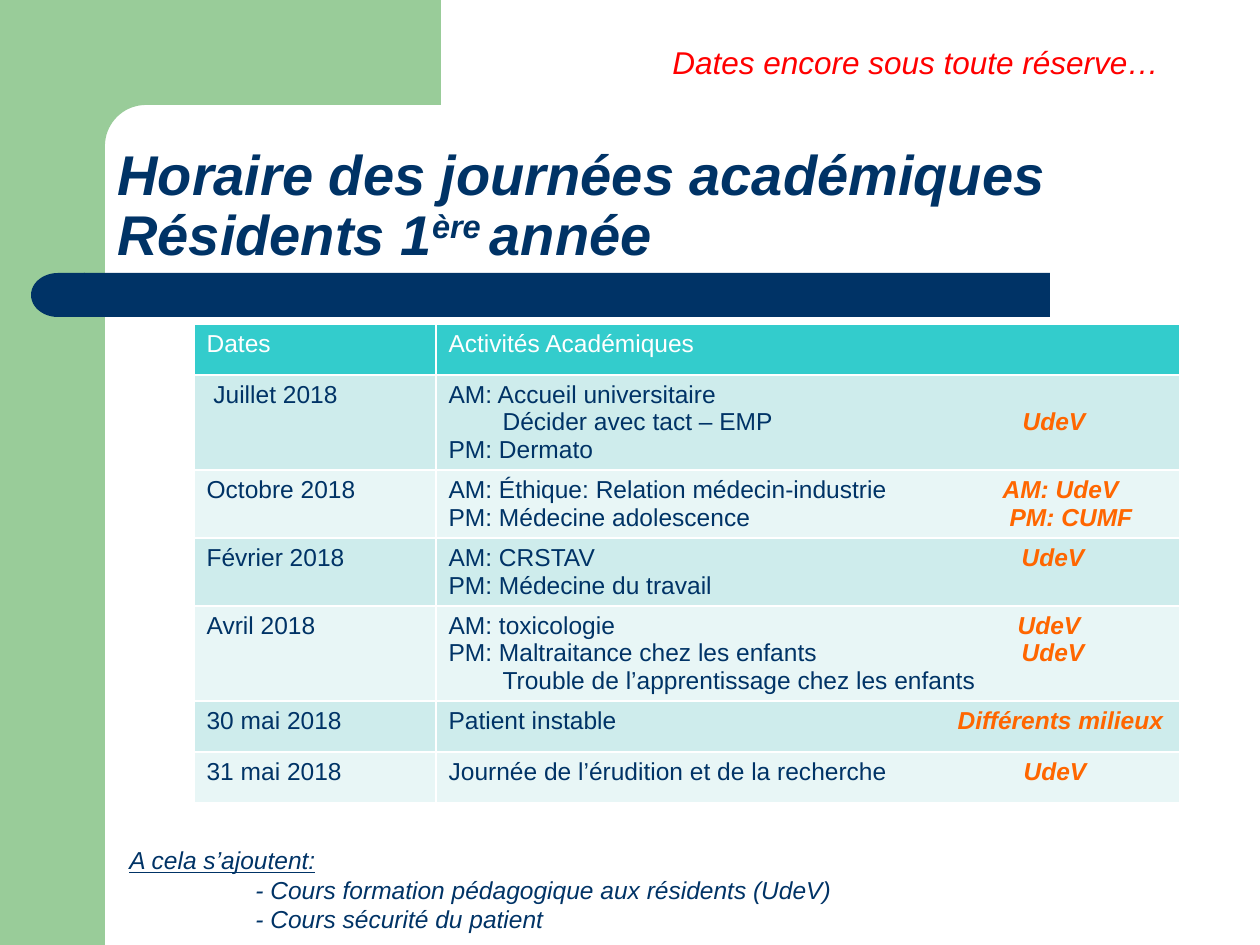
"""Build the slide with the first-year residents' academic day schedule."""
import math
from dataclasses import dataclass

from lxml import etree
from pptx import Presentation
from pptx import util as u
from pptx.dml.color import RGBColor
from pptx.enum import shapes, text
from pptx.oxml import ns

PX = 914400 / 126


@dataclass(frozen=True)
class Theme:
    font: str = "Arial"
    navy: str = "003366"
    green: str = "99CC99"
    teal: str = "33CCCC"
    orange: str = "FF6600"
    red: str = "FF0000"
    white: str = "FFFFFF"
    bands: tuple = ("CEECEC", "E8F6F6")
    title_size: int = 32
    notice_size: int = 18
    body_size: int = 14
    table_leading: float = 15.7
    footer_leading: float = 16.9


THEME = Theme()
STYLES = {
    "title": dict(color=THEME.navy, bold=True, italic=True),
    "super": dict(color=THEME.navy, bold=True, italic=True, baseline=30000),
    "notice": dict(color=THEME.red, italic=True),
    "header": dict(color=THEME.white),
    "body": dict(color=THEME.navy),
    "venue": dict(color=THEME.orange, bold=True, italic=True),
    "footer": dict(color=THEME.navy, italic=True),
    "lead": dict(color=THEME.navy, italic=True, underline=True),
}

TITLE = [("Horaire des journées académiques", "title"), ("\n", "title"),
         ("Résidents 1", "title"), ("ère ", "super"), ("année", "title")]
NOTICE = [("Dates encore sous toute réserve…", "notice")]
FOOTER = [
    [("A cela s’ajoutent:", "lead")],
    [("\t- Cours formation pédagogique aux résidents (UdeV)", "footer")],
    [("\t- Cours sécurité du patient", "footer")],
]
HEADINGS = ("Dates", "Activités Académiques")
SCHEDULE = [
    (" Juillet 2018", [("AM: Accueil universitaire",),
                       ("\tDécider avec tact – EMP", "UdeV", 574),
                       ("PM: Dermato",)]),
    ("Octobre 2018", [("AM: Éthique: Relation médecin-industrie", "AM: UdeV", 554),
                      ("PM: Médecine adolescence", "PM: CUMF", 561)]),
    ("Février 2018", [("AM: CRSTAV", "UdeV", 573),
                      ("PM: Médecine du travail",)]),
    ("Avril 2018", [("AM: toxicologie", "UdeV", 569),
                    ("PM: Maltraitance chez les enfants", "UdeV", 573),
                    ("\tTrouble de l’apprentissage chez les enfants",)]),
    ("30 mai 2018", [("Patient instable", "Différents milieux", 509)]),
    ("31 mai 2018", [("Journée de l’érudition et de la recherche", "UdeV", 575)]),
]
TABLE_LEFT, TABLE_TOP = 194, 324
COLUMNS = (242, 744)
ROW_HEIGHTS = {1: 51, 2: 68, 3: 95}
ACTIVITY_INDENT, FOOTER_INDENT = 54, 126


def px(value):
    return u.Emu(round(value * PX))


def fill_plain(shape, color):
    shape.shadow.inherit = False
    shape.fill.solid()
    shape.fill.fore_color.rgb = RGBColor.from_string(color)
    shape.line.fill.background()


def write(paragraph, runs, size, spacing=None, tabs=()):
    paragraph.font.name = THEME.font
    paragraph.font.size = u.Pt(size)
    if spacing:
        paragraph.line_spacing = spacing
    if tabs:
        tab_list = etree.Element(ns.qn("a:tabLst"))
        for position in tabs:
            etree.SubElement(tab_list, ns.qn("a:tab"), pos=str(px(position)), algn="l")
        paragraph._p.pPr.find(ns.qn("a:defRPr")).addprevious(tab_list)
    for words, style_name in runs:
        if words == "\n":
            paragraph.add_line_break()
            continue
        style = STYLES[style_name]
        run = paragraph.add_run()
        run.text = words
        run.font.color.rgb = RGBColor.from_string(style["color"])
        run.font.bold = style.get("bold", False)
        run.font.italic = style.get("italic", False)
        run.font.underline = style.get("underline")
        if "baseline" in style:
            run.font._element.set("baseline", str(style["baseline"]))


def write_all(frame, lines, size, spacing=None, tabs=()):
    for index, runs in enumerate(lines):
        paragraph = frame.add_paragraph() if index else frame.paragraphs[0]
        write(paragraph, runs, size, spacing, tabs)


def add_text(slide, box, lines, size, anchor=text.MSO_ANCHOR.TOP, **options):
    frame = slide.shapes.add_textbox(*map(px, box)).text_frame
    frame.word_wrap = True
    frame.vertical_anchor = anchor
    write_all(frame, lines, size, **options)


def add_decoration(slide):
    kinds = shapes.MSO_SHAPE
    band = slide.shapes.add_shape(kinds.RECTANGLE, *map(px, (0, 0, 105, 945)))
    fill_plain(band, THEME.green)

    center, radius = 146, 41
    arc = [(center - radius * math.sin(math.radians(angle)),
            center - radius * math.cos(math.radians(angle)))
           for angle in range(0, 91, 5)]
    outline = [(441, 105), *arc, (105, 161), (63, 161), (63, 0)]
    builder = slide.shapes.build_freeform(px(441), 0)
    builder.add_line_segments([(px(x), px(y)) for x, y in outline])
    fill_plain(builder.convert_to_shape(), THEME.green)

    bar = slide.shapes.add_shape(kinds.RECTANGLE, *map(px, (84, 273, 966, 44)))
    bar_end = slide.shapes.add_shape(kinds.FLOWCHART_DELAY, *map(px, (31, 273, 54, 44)))
    bar_end.rotation = 180
    for shape in (bar, bar_end):
        fill_plain(shape, THEME.navy)


def format_cell(cell, color):
    properties = cell._tc.get_or_add_tcPr()
    for side in "LRTB":
        line = etree.SubElement(properties, ns.qn(f"a:ln{side}"), w=str(u.Pt(1)))
        solid = etree.SubElement(line, ns.qn("a:solidFill"))
        etree.SubElement(solid, ns.qn("a:srgbClr"), val=THEME.white)
    cell.fill.solid()
    cell.fill.fore_color.rgb = RGBColor.from_string(color)


def write_activity(paragraph, activity, venue=None, venue_start=None):
    tabs = [ACTIVITY_INDENT] if activity.startswith("\t") else []
    runs = [(activity, "body")]
    if venue:
        tabs.append(venue_start)
        runs = [(activity + "\t", "body"), (venue, "venue")]
    write(paragraph, runs, THEME.body_size, u.Pt(THEME.table_leading), tabs)


def add_schedule(slide):
    heights = [ROW_HEIGHTS[1]] + [ROW_HEIGHTS[len(lines)] for _, lines in SCHEDULE]
    box = (TABLE_LEFT, TABLE_TOP, sum(COLUMNS), sum(heights))
    table = slide.shapes.add_table(len(heights), len(COLUMNS), *map(px, box)).table
    table.first_row = table.horz_banding = False
    for column, width in zip(table.columns, COLUMNS):
        column.width = px(width)
    for index, (row, height) in enumerate(zip(table.rows, heights)):
        row.height = px(height)
        for cell in row.cells:
            format_cell(cell, THEME.bands[(index - 1) % 2] if index else THEME.teal)

    leading = u.Pt(THEME.table_leading)
    for column, heading in enumerate(HEADINGS):
        write_all(table.cell(0, column).text_frame, [[(heading, "header")]],
                  THEME.body_size, leading)
    for row, (date, lines) in enumerate(SCHEDULE, 1):
        write_all(table.cell(row, 0).text_frame, [[(date, "body")]],
                  THEME.body_size, leading)
        frame = table.cell(row, 1).text_frame
        for index, line in enumerate(lines):
            paragraph = frame.add_paragraph() if index else frame.paragraphs[0]
            write_activity(paragraph, *line)


def main():
    presentation = Presentation()
    presentation.slide_width, presentation.slide_height = px(1260), px(945)
    slide = presentation.slides.add_slide(presentation.slide_layouts[6])
    add_decoration(slide)
    add_text(slide, (105, 117, 1092, 157), [TITLE], THEME.title_size,
             anchor=text.MSO_ANCHOR.BOTTOM, spacing=0.9)
    add_schedule(slide)
    add_text(slide, (117, 839, 840, 102), FOOTER, THEME.body_size,
             spacing=u.Pt(THEME.footer_leading), tabs=[FOOTER_INDENT])
    add_text(slide, (660, 37, 525, 50), [NOTICE], THEME.notice_size)
    presentation.save("out.pptx")


if __name__ == "__main__":
    main()
